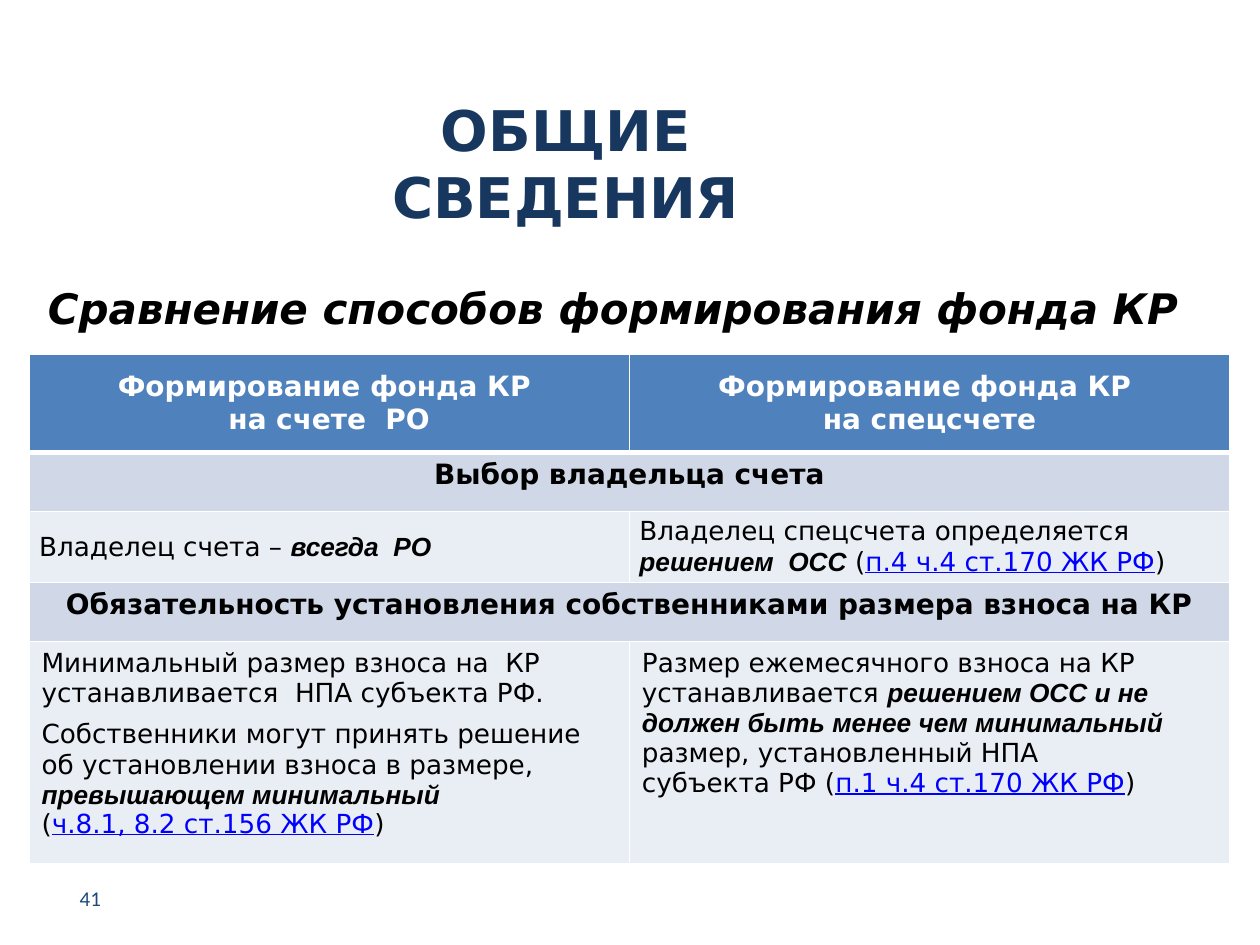
from lxml import etree
from pptx import Presentation
from pptx.dml.color import RGBColor
from pptx.enum.text import MSO_ANCHOR, MSO_AUTO_SIZE, PP_ALIGN
from pptx.oxml.ns import qn
from pptx.util import Inches, Pt

LEFT, CENTER, RIGHT, JUSTIFY = PP_ALIGN.LEFT, PP_ALIGN.CENTER, PP_ALIGN.RIGHT, PP_ALIGN.JUSTIFY
TOP, MIDDLE = MSO_ANCHOR.TOP, MSO_ANCHOR.MIDDLE

NAVY = RGBColor(0x17, 0x37, 0x5E)
NUMBER_BLUE = RGBColor(0x1F, 0x49, 0x7D)
BLACK = RGBColor(0, 0, 0)
WHITE = RGBColor(0xFF, 0xFF, 0xFF)
LINK_BLUE = RGBColor(0, 0, 0xFF)
HEADER_FILL = RGBColor(0x4F, 0x81, 0xBD)
SECTION_FILL = RGBColor(0xD0, 0xD8, 0xE8)
BODY_FILL = RGBColor(0xE9, 0xED, 0xF4)
MAIN_FONT, ACCENT_FONT = "DejaVu Sans", "Arial"

# Content: a cell is a list of paragraphs, a paragraph a list of (text, style)
TITLE = "ОБЩИЕ СВЕДЕНИЯ"
SUBTITLE = "Сравнение способов формирования фонда КР"
PAGE_NUMBER = "41"
ROWS = [
    ("header", 0.78, [
        [[("Формирование фонда КР ", "header")], [("на счете  РО", "header")]],
        [[("Формирование фонда КР ", "header")], [("на спецсчете", "header")]],
    ]),
    ("section", 0.47, [[[("Выбор владельца счета", "section")]]]),
    ("owner", 0.47, [
        [[("Владелец счета\u00a0– ", "plain"), ("всегда  РО", "accent")]],
        [[("Владелец спецсчета определяется ", "plain"), ("решением  ОСС", "accent"),
          (" (", "plain"), ("п.4 ч.4 ст.170 ЖК\u00a0РФ", "link"), (")", "plain")]],
    ]),
    ("section", 0.47, [
        [[("Обязательность установления собственниками размера взноса на КР", "section")]],
    ]),
    ("fee", 1.76, [
        [[("Минимальный размер взноса на  КР устанавливается  НПА субъекта\u00a0РФ.", "plain")],
         [("Собственники могут принять решение об\u00a0установлении взноса в размере, ", "plain"),
          ("превышающем минимальный", "accent")],
         [("(", "plain"), ("ч.8.1, 8.2 ст.156 ЖК\u00a0РФ", "link"), (")", "plain")]],
        [[("Размер ежемесячного взноса на КР устанавливается ", "plain"),
          ("решением ОСС и не должен быть менее чем минимальный ", "accent"),
          ("размер, установленный НПА субъекта\u00a0РФ (", "plain"),
          ("п.1 ч.4 ст.170 ЖК\u00a0РФ", "link"), (")", "plain")]],
    ]),
]
# Row kind: fill, alignment, anchor, tight margins
ROW_STYLES = {
    "header": (HEADER_FILL, CENTER, MIDDLE, True),
    "section": (SECTION_FILL, CENTER, TOP, False),
    "owner": (BODY_FILL, LEFT, MIDDLE, True),
    "fee": (BODY_FILL, LEFT, TOP, False),
}
# Run style: font, size, colour, bold, italic, underline
RUN_STYLES = {
    "title": (MAIN_FONT, 32, NAVY, True, False, False),
    "subtitle": (MAIN_FONT, 24, BLACK, True, True, False),
    "number": ("Calibri", 12, NUMBER_BLUE, False, False, False),
    "header": (MAIN_FONT, 16, WHITE, True, False, False),
    "section": (MAIN_FONT, 16, BLACK, True, False, False),
    "plain": (MAIN_FONT, 15, BLACK, False, False, False),
    "accent": (ACCENT_FONT, 15, BLACK, True, True, False),
    "link": (MAIN_FONT, 15, LINK_BLUE, False, False, True),
}


def style_run(run, style):
    font = run.font
    font.name, size, color, font.bold, font.italic, font.underline = RUN_STYLES[style]
    font.size = Pt(size)
    font.color.rgb = color


def place(shape, left, top, width, height):
    shape.left, shape.top = Inches(left), Inches(top)
    shape.width, shape.height = Inches(width), Inches(height)


def fill_text(shape, text, style, alignment, anchor):
    frame = shape.text_frame
    frame.text = text
    frame.word_wrap = True
    frame.auto_size = MSO_AUTO_SIZE.NONE
    frame.vertical_anchor = anchor
    paragraph = frame.paragraphs[0]
    paragraph.alignment = alignment
    style_run(paragraph.runs[0], style)
    return paragraph


def set_borders(cell, top, bottom):
    properties = cell._tc.get_or_add_tcPr()
    widths = {"a:lnL": 1, "a:lnR": 1, "a:lnT": top, "a:lnB": bottom}
    for index, (tag, width) in enumerate(widths.items()):
        line = etree.Element(qn(tag), w=str(Pt(width)))
        solid = etree.SubElement(line, qn("a:solidFill"))
        etree.SubElement(solid, qn("a:srgbClr"), val=str(WHITE))
        properties.insert(index, line)


def fill_cell(cell, paragraphs, alignment):
    frame = cell.text_frame
    for index, runs in enumerate(paragraphs):
        paragraph = frame.add_paragraph() if index else frame.paragraphs[0]
        paragraph.alignment = alignment
        for text, style in runs:
            run = paragraph.add_run()
            run.text = text
            style_run(run, style)


presentation = Presentation()
presentation.slide_width, presentation.slide_height = Inches(10), Inches(7.5)
slide = presentation.slides.add_slide(presentation.slide_layouts[1])

# Title and subtitle
title, body = slide.placeholders
place(title, 2.42, 0.55, 4.14, 1.48)
fill_text(title, TITLE, "title", CENTER, MIDDLE)
place(body, 0.28, 2.19, 9.57, 4.84)
subtitle = fill_text(body, SUBTITLE, "subtitle", LEFT, TOP)
subtitle_properties = subtitle._p.get_or_add_pPr()
subtitle_properties.set("marL", str(Inches(0.38)))
subtitle_properties.set("indent", str(-Inches(0.38)))
etree.SubElement(subtitle_properties, qn("a:buNone"))

# Page number
number_box = slide.shapes.add_textbox(Inches(0.35), Inches(6.93), Inches(0.55), Inches(0.4))
fill_text(number_box, PAGE_NUMBER, "number", RIGHT, MIDDLE)

# Comparison table
table = slide.shapes.add_table(
    len(ROWS), 2, Inches(0.23), Inches(2.81), Inches(9.53),
    Inches(sum(height for _, height, _ in ROWS))).table
for row_index, (kind, height, contents) in enumerate(ROWS):
    fill, alignment, anchor, tight = ROW_STYLES[kind]
    table.rows[row_index].height = Inches(height)
    cells = list(table.rows[row_index].cells)
    for cell in cells:
        cell.fill.solid()
        cell.fill.fore_color.rgb = fill
        cell.vertical_anchor = anchor
        if tight:
            cell.margin_left = cell.margin_right = Inches(0.08)
            cell.margin_top = cell.margin_bottom = Inches(0.04)
        set_borders(cell, 3 if row_index == 1 else 1, 3 if row_index == 0 else 1)
    if len(contents) == 1:
        cells[0].merge(cells[1])
    for cell, paragraphs in zip(cells, contents):
        fill_cell(cell, paragraphs, alignment)

# Paragraph exceptions
table.cell(2, 0).text_frame.paragraphs[0].alignment = JUSTIFY
table.cell(4, 0).text_frame.paragraphs[0].space_after = Pt(6)

presentation.save("out.pptx")
